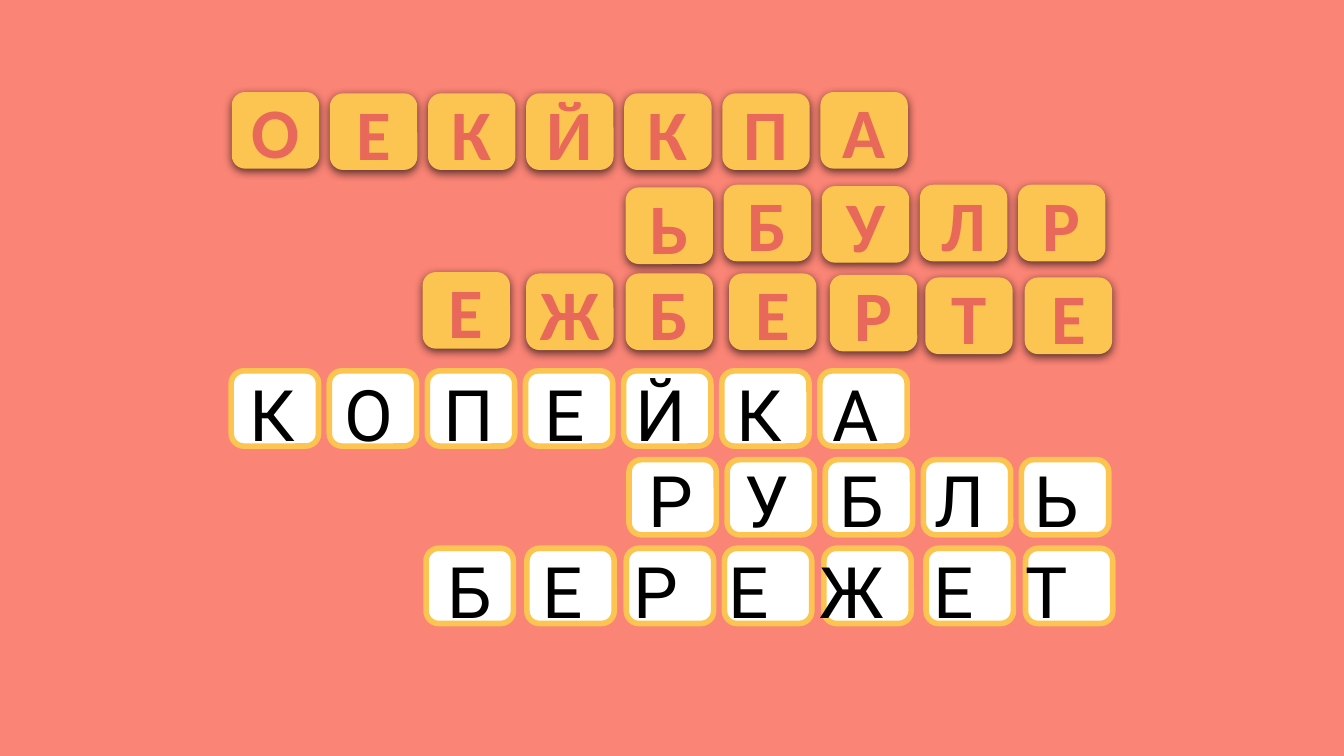
import pptx
import pptx.dml.color
import pptx.enum.shapes
import pptx.enum.text
import pptx.oxml
import pptx.oxml.ns
import pptx.util

Inches, Pt = pptx.util.Inches, pptx.util.Pt
SHAPE = pptx.enum.shapes.MSO_SHAPE
ALIGN = pptx.enum.text.PP_ALIGN
ANCHOR = pptx.enum.text.MSO_ANCHOR

# Content: scrambled letters as (letters, left of each tile, top of each tile)
STEP = 0.73


def evenly(start, step, count):
    return [start + step * index for index in range(count)]


SCRAMBLED = [
    ("ОЕКЙКПА", evenly(1.73, STEP, 7), [0.69, 0.7, 0.7, 0.7, 0.7, 0.7, 0.69]),
    ("ЬБУЛР", evenly(4.66, STEP, 5), [1.4, 1.38, 1.39, 1.38, 1.38]),
    ("ЕЖБЕРТЕ", [3.15, 3.92, 4.66, 5.43, 6.18, 6.89, 7.63],
     [2.03, 2.04, 2.04, 2.04, 2.05, 2.07, 2.07]),
]

# Answers: (word, left of each cell, top of cells, text left, text top)
ANSWERS = [
    ("КОПЕЙКА", evenly(1.72, STEP, 7), 2.76, 1.76, 0.57),
    ("РУБЛЬ", evenly(4.68, STEP, 5), 3.42, 4.73, 1.21),
    ("БЕРЕЖЕТ", [3.17, 3.92, 4.66, 5.39, 6.13, 6.89, 7.63], 4.08, 3.23, 1.89),
]

CORAL, YELLOW, RED, WHITE, BLACK = "FA8475", "FCC450", "E86859", "FFFFFF", "000000"
TILE_FONT = {"name": "Calibri", "size": Pt(38), "bold": True}
ANSWER_FONT = {"name": "Roboto", "size": Pt(38)}
LETTER_SPACING = 27
SHADOW = (
    '<a:outerShdw xmlns:a="http://schemas.openxmlformats.org/drawingml/2006/main" '
    f'blurRad="{Pt(5)}" dist="{Pt(1.5)}" dir="5400000" algn="bl" rotWithShape="0">'
    '<a:srgbClr val="000000"><a:alpha val="63000"/></a:srgbClr></a:outerShdw>'
)


def color(value):
    return pptx.dml.color.RGBColor.from_string(value)


def add_block(page, kind, place, fill, line=None, width=0):
    block = page.shapes.add_shape(kind, *map(Inches, place))
    block.shadow.inherit = False
    block.fill.solid()
    block.fill.fore_color.rgb = color(fill)
    if line:
        block.line.color.rgb = color(line)
        block.line.width = Pt(width)
    else:
        block.line.fill.background()
    return block


def write(box, text, look, shade, inset, anchor, align):
    frame = box.text_frame
    frame.word_wrap = True
    frame.vertical_anchor = anchor
    for side in ("left", "top", "right", "bottom"):
        setattr(frame, f"margin_{side}", Inches(inset))
    para = frame.paragraphs[0]
    para.alignment = align
    span = para.add_run()
    span.text = text
    for name, value in look.items():
        setattr(span.font, name, value)
    span.font.color.rgb = color(shade)
    return span


def add_tile(page, letter, left, top):
    tile = add_block(page, SHAPE.ROUNDED_RECTANGLE, (left, top, 0.64, 0.56),
                     YELLOW, YELLOW, 0.75)
    effects = tile._element.spPr.find(pptx.oxml.ns.qn("a:effectLst"))
    effects.append(pptx.oxml.parse_xml(SHADOW))
    write(tile, letter, TILE_FONT, RED, 0, ANCHOR.MIDDLE, ALIGN.CENTER)


def main():
    # Widescreen 16:9 page
    deck = pptx.Presentation()
    deck.slide_width = Inches(10)
    deck.slide_height = Inches(10) * 9 // 16
    page = deck.slides.add_slide(deck.slide_layouts[6])

    # Background
    add_block(page, SHAPE.RECTANGLE, (0, -0.01, 10, 5.64), CORAL)

    # Scrambled letter tiles
    for letters, lefts, tops in SCRAMBLED:
        for letter, left, top in zip(letters, lefts, tops):
            add_tile(page, letter, left, top)

    # Answer cells
    for _, lefts, top, _, _ in ANSWERS:
        for left in lefts:
            add_block(page, SHAPE.ROUNDED_RECTANGLE, (left, top, 0.65, 0.56),
                      WHITE, YELLOW, 3)

    # Answer words, spaced out over their cells
    for word, _, _, left, top in ANSWERS:
        box = page.shapes.add_textbox(*map(Inches, (left, top, 5.64, 2.92)))
        span = write(box, word, ANSWER_FONT, BLACK, 0.1, ANCHOR.BOTTOM, ALIGN.LEFT)
        span._r.get_or_add_rPr().set("spc", str(LETTER_SPACING * 100))

    deck.save("out.pptx")


if __name__ == "__main__":
    main()
